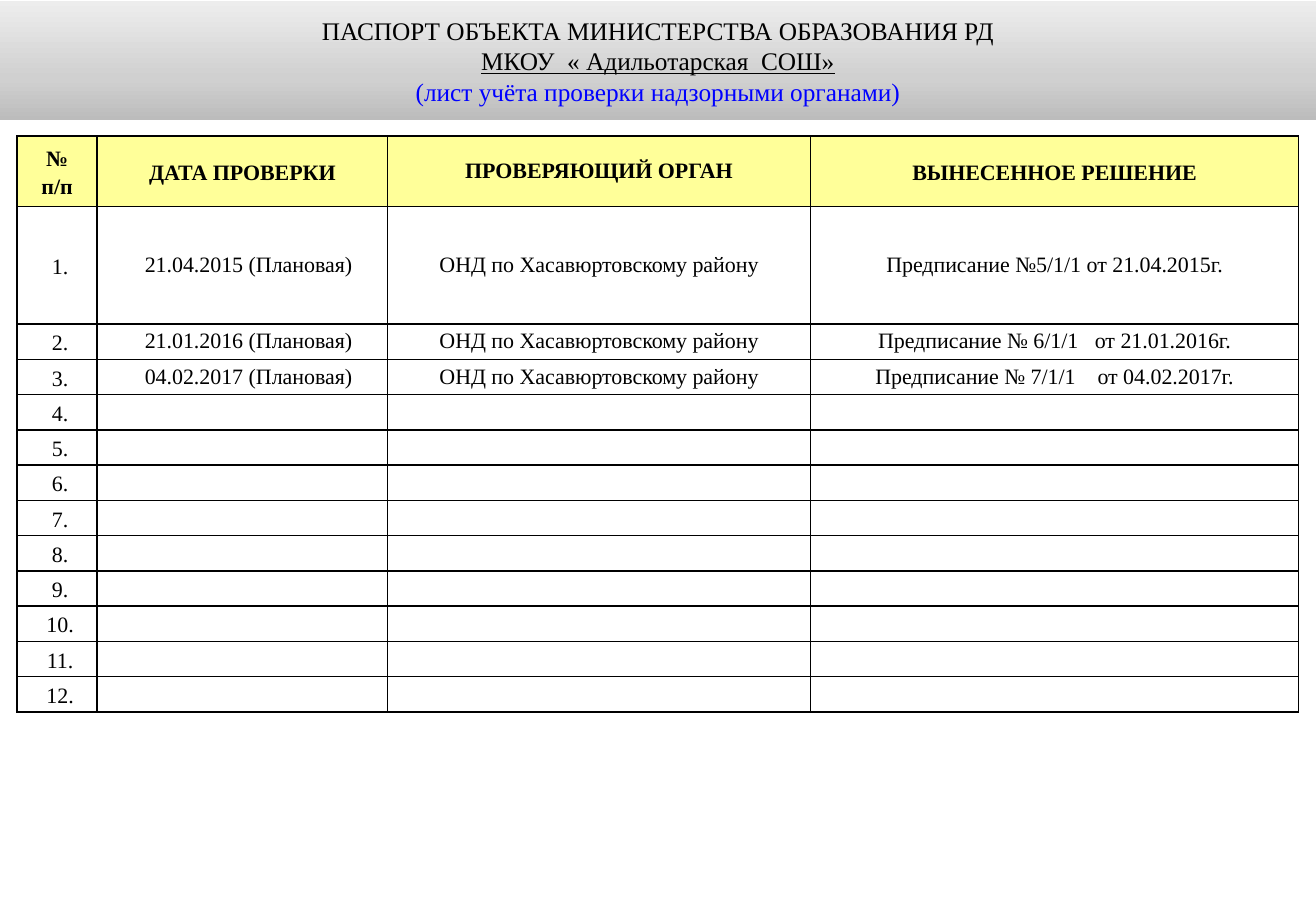
from copy import deepcopy

from lxml.etree import SubElement
from pptx import Presentation
from pptx.dml.color import RGBColor
from pptx.enum.text import MSO_ANCHOR as Anchor, MSO_AUTO_SIZE as Auto, PP_ALIGN as Align
from pptx.oxml.ns import qn
from pptx.util import Pt

BLACK = RGBColor(0x00, 0x00, 0x00)
BLUE = RGBColor(0x00, 0x00, 0xFF)
WHITE = RGBColor(0xFF, 0xFF, 0xFF)
YELLOW = RGBColor(0xFF, 0xFF, 0x99)
STOPS = [
    (0, RGBColor(0xBC, 0xBC, 0xBC)),
    (0.35, RGBColor(0xD0, 0xD0, 0xD0)),
    (1, RGBColor(0xED, 0xED, 0xED)),
]
FONT = "Times New Roman"
SIZE = 13
WIDE = 780
TITLE = [
    "ПАСПОРТ ОБЪЕКТА МИНИСТЕРСТВА ОБРАЗОВАНИЯ РД",
    "МКОУ  « Адильотарская  СОШ»",
    "(лист учёта проверки надзорными органами)",
]
HEAD = ["№\nп/п", "ДАТА ПРОВЕРКИ", "ПРОВЕРЯЮЩИЙ ОРГАН", "ВЫНЕСЕННОЕ РЕШЕНИЕ"]
BODY = "ОНД по Хасавюртовскому району"
CHECKS = [
    ("21.04.2015 (Плановая)", BODY, "Предписание №5/1/1 от 21.04.2015г."),
    ("21.01.2016 (Плановая)", BODY, "Предписание № 6/1/1   от 21.01.2016г."),
    ("04.02.2017 (Плановая)", BODY, "Предписание № 7/1/1    от 04.02.2017г."),
]
COUNT = 12
COLS = [47.5, 172.1, 250.6, 289.4]
ROWS = [41.8, 69.8] + [20.9] * (COUNT - 1)
INDENTS = [3.6, 7.2, 0, 0]


def style(para, size, color=BLACK, bold=False, line=False):
    para.alignment = Align.CENTER
    for run in para.runs:
        font = run.font
        font.name = FONT
        font.size = Pt(size)
        font.color.rgb = color
        font.bold = bold
        font.underline = line


def add_title(slide):
    title = slide.shapes.title
    title.left, title.top, title.width, title.height = Pt(0), Pt(0.7), Pt(WIDE), Pt(70.6)
    fill = title.fill
    fill.gradient()
    fill.gradient_angle = 90
    stops = title._element.spPr.find(".//" + qn("a:gsLst"))
    stops.insert(1, deepcopy(stops[0]))
    for stop, (place, color) in zip(fill.gradient_stops, STOPS):
        stop.position = place
        stop.color.rgb = color
    frame = title.text_frame
    frame.text = "\n".join(TITLE)
    frame.word_wrap = True
    frame.auto_size = Auto.NONE
    frame.vertical_anchor = Anchor.MIDDLE
    first, school, note = frame.paragraphs
    style(first, 15)
    style(school, 15, line=True)
    style(note, 15, color=BLUE)


def add_edges(cell):
    props = cell._tc.get_or_add_tcPr()
    for side in ("a:lnL", "a:lnR", "a:lnT", "a:lnB"):
        edge = SubElement(props, qn(side), w=str(Pt(1)))
        solid = SubElement(edge, qn("a:solidFill"))
        SubElement(solid, qn("a:srgbClr"), val=str(BLACK))


def fill_cell(cell, text, color, bold, space, indent):
    add_edges(cell)
    cell.fill.solid()
    cell.fill.fore_color.rgb = color
    cell.margin_left = cell.margin_right = Pt(2.2)
    cell.margin_top = cell.margin_bottom = 0
    cell.vertical_anchor = Anchor.MIDDLE
    cell.text_frame.text = text
    for para in cell.text_frame.paragraphs:
        style(para, SIZE, bold=bold)
        para.line_spacing = space
        para._p.get_or_add_pPr().set("marL", str(Pt(indent)))
        if not text:
            SubElement(para._p, qn("a:endParaRPr"), sz=str(SIZE * 100))


def add_log(slide):
    shape = slide.shapes.add_table(
        len(ROWS), len(COLS), Pt(10.1), Pt(80.6), Pt(sum(COLS)), Pt(sum(ROWS))
    )
    table = shape.table
    table.first_row = table.horz_banding = False
    for col, width in zip(table.columns, COLS):
        col.width = Pt(width)
    for row, height in zip(table.rows, ROWS):
        row.height = Pt(height)
    for col, text in enumerate(HEAD):
        space = Pt(14) if col == 2 else 1.15
        fill_cell(table.cell(0, col), text, YELLOW, True, space, 0)
    blank = [("", "", "")] * (COUNT - len(CHECKS))
    for row, check in enumerate(CHECKS + blank, 1):
        for col, text in enumerate((f"{row}.", *check)):
            space = Pt(14) if col else 1.15
            fill_cell(table.cell(row, col), text, WHITE, False, space, INDENTS[col])


def main():
    deck = Presentation()
    deck.slide_width, deck.slide_height = Pt(WIDE), Pt(540)
    slide = deck.slides.add_slide(deck.slide_layouts[5])
    add_title(slide)
    add_log(slide)
    deck.save("out.pptx")


if __name__ == "__main__":
    main()
